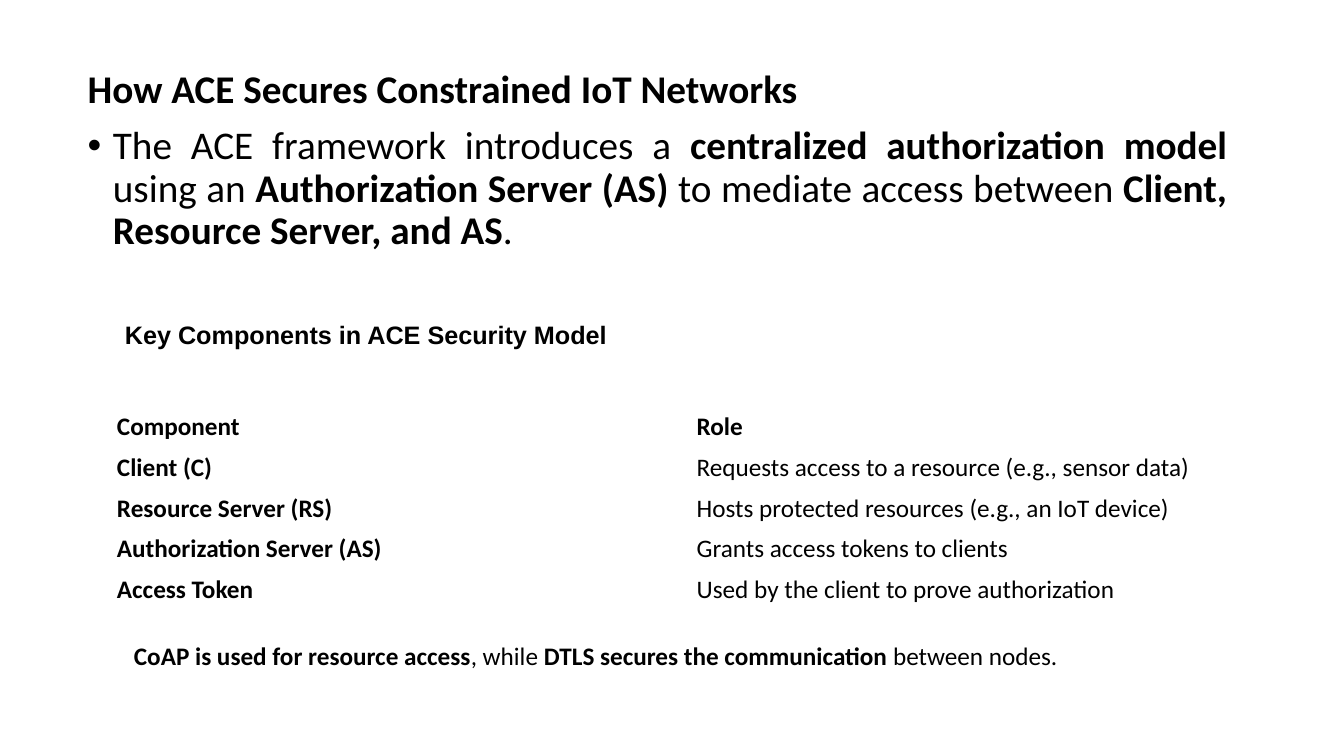
from dataclasses import dataclass

from lxml.etree import SubElement
from pptx import Presentation
from pptx.dml.color import RGBColor
from pptx.enum.text import MSO_ANCHOR, MSO_AUTO_SIZE, PP_ALIGN
from pptx.oxml.ns import qn
from pptx.util import Pt

PX = 9144  # EMU per px, 100 px to the inch


@dataclass(frozen=True)
class Theme:
    ink: RGBColor = RGBColor(0, 0, 0)
    font: str = "Calibri"
    label_font: str = "Arial"
    lead: int = 28
    text: int = 18


THEME = Theme()

HEADING = [("How ACE Secures Constrained IoT Networks", True)]
INTRO = [
    ("The ACE framework introduces a ", False),
    ("centralized authorization model", True),
    (" using an ", False),
    ("Authorization Server (AS)", True),
    (" to mediate access between ", False),
    ("Client, Resource Server, and AS", True),
    (".", False),
]
TABLE_LABEL = [("Key Components in ACE Security Model", True)]
COMPONENTS = [
    ("Component", "Role"),
    ("Client (C)", "Requests access to a resource (e.g., sensor data)"),
    ("Resource Server (RS)", "Hosts protected resources (e.g., an IoT device)"),
    ("Authorization Server (AS)", "Grants access tokens to clients"),
    ("Access Token", "Used by the client to prove authorization"),
]
CLOSING = [
    ("CoAP is used for resource access", True),
    (", while ", False),
    ("DTLS secures the communication", True),
    (" between nodes.", False),
]


def px(*lengths):
    return [n * PX for n in lengths]


def apply(target, formats):
    for name, value in formats.items():
        setattr(target, name, value)


def add_runs(p, runs, size, font=THEME.font):
    for text, bold in runs:
        r = p.add_run()
        r.text = text
        apply(r.font, {"name": font, "size": Pt(size), "bold": bold})
        r.font.color.rgb = THEME.ink


def set_bullet(p, char=None):
    pPr = p._p.get_or_add_pPr()
    apply_indent = {"marL": 25 * PX, "indent": -25 * PX}
    for name, value in apply_indent.items():
        pPr.set(name, str(value))
    if char:
        SubElement(pPr, qn("a:buFont")).set("typeface", THEME.label_font)
        SubElement(pPr, qn("a:buChar")).set("char", char)
    else:
        SubElement(pPr, qn("a:buNone"))


# Heading and introduction
def add_intro(s, box):
    sp = s.placeholders[1]
    apply(sp, dict(zip(("left", "top", "width", "height"), px(*box))))
    tf = sp.text_frame
    apply(tf, {"word_wrap": True, "auto_size": MSO_AUTO_SIZE.NONE,
               "vertical_anchor": MSO_ANCHOR.TOP})
    parts = [(tf.paragraphs[0], HEADING, PP_ALIGN.LEFT, None),
             (tf.add_paragraph(), INTRO, PP_ALIGN.JUSTIFY, "•")]
    for p, runs, align, bullet in parts:
        apply(p, {"alignment": align, "line_spacing": 0.9,
                  "space_before": Pt(10)})
        set_bullet(p, bullet)
        add_runs(p, runs, THEME.lead)


# Single line of text
def add_line(s, box, runs, font=THEME.font):
    tf = s.shapes.add_textbox(*px(*box)).text_frame
    apply(tf, {"word_wrap": True, "vertical_anchor": MSO_ANCHOR.TOP})
    add_runs(tf.paragraphs[0], runs, THEME.text, font)


# Components and their roles
def add_components(s, box):
    table = s.shapes.add_table(len(COMPONENTS), 2, *px(*box)).table
    apply(table, {"first_row": False, "horz_banding": False})
    for i, row in enumerate(COMPONENTS):
        for j, text in enumerate(row):
            cell = table.cell(i, j)
            cell.fill.background()
            cell.vertical_anchor = MSO_ANCHOR.MIDDLE
            bold = i == 0 or j == 0
            add_runs(cell.text_frame.paragraphs[0], [(text, bold)], THEME.text)


def main():
    prs = Presentation()
    apply(prs, dict(zip(("slide_width", "slide_height"), px(1333, 750))))
    s = prs.slides.add_slide(prs.slide_layouts[1])
    title = s.shapes.title._element
    title.getparent().remove(title)

    add_intro(s, (77, 64, 1150, 476))
    add_components(s, (106, 403, 1150, 200))
    add_line(s, (114, 312, 503, 71), TABLE_LABEL, THEME.label_font)
    add_line(s, (123, 630, 1087, 40), CLOSING)
    prs.save("out.pptx")


if __name__ == "__main__":
    main()
